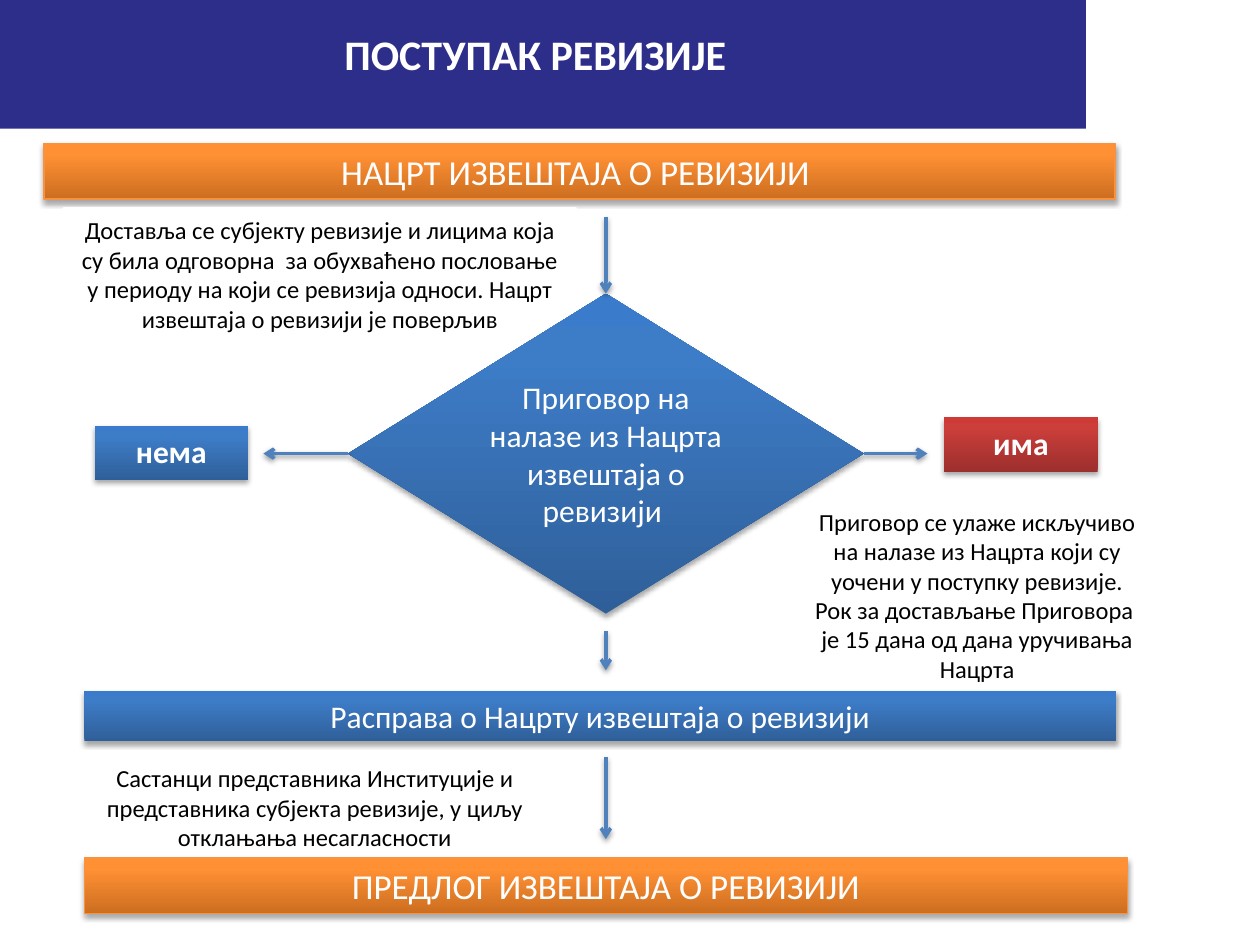
"""Build the audit procedure flowchart slide."""
import copy
import dataclasses

import pptx
import pptx.dml.color
import pptx.enum.shapes
import pptx.enum.text
import pptx.oxml
import pptx.oxml.ns
import pptx.util

Pt = pptx.util.Pt
Color = pptx.dml.color.RGBColor.from_string
Shapes = pptx.enum.shapes.MSO_SHAPE
Anchor = pptx.enum.text.MSO_ANCHOR
AutoSize = pptx.enum.text.MSO_AUTO_SIZE


@dataclasses.dataclass(frozen=True)
class Theme:
    """Hold the colours and type sizes of the slide."""
    font: str = "Calibri"
    header: str = "2D2D8A"
    white: str = "FFFFFF"
    black: str = "000000"
    arrow: str = "4F81BD"
    orange_line: str = "F69240"
    orange: tuple = ("CC6E20", "FF9034", "FF9136")
    blue: tuple = ("2F5F99", "3D7CC7", "3A7CCB")
    red: tuple = ("9C2F2D", "CB3E3A", "CE3B37")
    stops: tuple = (0, 0.8, 1)
    title_size: int = 24
    stage_size: int = 20
    step_size: int = 18
    note_size: int = 14


THEME = Theme()


def apply_format(target, values):
    """Set each named attribute of the target."""
    for name, value in values.items():
        setattr(target, name, value)


def write_text(shape, text, size, color, bold=False, anchor=Anchor.TOP, grow=False):
    """Write one centred paragraph into a shape."""
    frame = shape.text_frame
    apply_format(frame, {
        "word_wrap": True,
        "vertical_anchor": anchor,
        "auto_size": AutoSize.SHAPE_TO_FIT_TEXT if grow else AutoSize.NONE,
    })
    paragraph = frame.paragraphs[0]
    paragraph.alignment = pptx.enum.text.PP_ALIGN.CENTER
    run = paragraph.add_run()
    run.text = text
    apply_format(run.font, {"name": THEME.font, "size": Pt(size), "bold": bold})
    run.font.color.rgb = Color(color)


def add_shadow(element, opacity, distance):
    """Put a soft downward shadow into the effect list of an element."""
    properties = element.spPr
    effects = properties.find(pptx.oxml.ns.qn("a:effectLst"))
    if effects is None:
        effects = pptx.oxml.parse_xml(f"<a:effectLst {pptx.oxml.ns.nsdecls('a')}/>")
        properties.append(effects)
    effects.append(pptx.oxml.parse_xml(
        f'<a:outerShdw {pptx.oxml.ns.nsdecls("a")} blurRad="{Pt(3.1)}" '
        f'dist="{Pt(distance)}" dir="5400000" rotWithShape="0">'
        f'<a:srgbClr val="{THEME.black}"><a:alpha val="{opacity * 1000}"/></a:srgbClr>'
        '</a:outerShdw>'))


def add_panel(slide, box, fill, line=None, width=0.75, kind=Shapes.RECTANGLE):
    """Add a flat shape with a solid fill and an optional outline."""
    shape = slide.shapes.add_shape(kind, *map(Pt, box))
    shape.shadow.inherit = False
    shape.fill.solid()
    shape.fill.fore_color.rgb = Color(fill)
    if line:
        shape.line.color.rgb = Color(line)
        shape.line.width = Pt(width)
    else:
        shape.line.fill.background()
    return shape


def add_block(slide, box, colors, text, size=THEME.step_size, line=None,
              kind=Shapes.RECTANGLE, **text_format):
    """Add a shaded flowchart block with its label."""
    shape = add_panel(slide, box, colors[0], line, kind=kind)
    shape.fill.gradient()
    shape.fill.gradient_angle = 90
    stop_list = shape._element.spPr.find(".//" + pptx.oxml.ns.qn("a:gsLst"))
    stop_list.append(copy.deepcopy(stop_list[0]))
    for stop, position, color in zip(shape.fill.gradient_stops, THEME.stops, colors):
        stop.position = position
        stop.color.rgb = Color(color)
    add_shadow(shape._element, 35, 1.8)
    write_text(shape, text, size, THEME.white, **text_format)


def add_note(slide, box, text, size=THEME.note_size, color=THEME.black, bold=False):
    """Add a text box that grows with its text."""
    shape = slide.shapes.add_textbox(*map(Pt, box))
    write_text(shape, text, size, color, bold, grow=True)


def add_arrow(slide, start, end):
    """Add a shadowed connector with an open arrowhead at its end."""
    connector = slide.shapes.add_connector(
        pptx.enum.shapes.MSO_CONNECTOR.STRAIGHT, *map(Pt, start + end))
    connector.line.color.rgb = Color(THEME.arrow)
    connector.line.width = Pt(2)
    connector.line._get_or_add_ln().append(pptx.oxml.parse_xml(
        f'<a:tailEnd {pptx.oxml.ns.nsdecls("a")} type="arrow"/>'))
    add_shadow(connector._element, 38, 1.6)


def main():
    """Build and save the slide."""
    presentation = pptx.Presentation()
    apply_format(presentation, {"slide_width": Pt(720), "slide_height": Pt(540)})
    slide = presentation.slides.add_slide(presentation.slide_layouts[6])

    add_panel(slide, (-1.5, 0, 622, 73.5), THEME.header)
    add_note(slide, (36.7, 13, 538.5, 36), "ПОСТУПАК РЕВИЗИЈЕ",
             THEME.title_size, THEME.white, True)

    bar = {"anchor": Anchor.MIDDLE, "grow": True}
    stage = {"size": THEME.stage_size, "line": THEME.orange_line, **bar}
    add_block(slide, (25.2, 82, 612, 31.7), THEME.orange,
              "НАЦРТ ИЗВЕШТАЈА О РЕВИЗИЈИ ", **stage)
    add_block(slide, (54, 243.5, 87.8, 31), THEME.blue, "нема", bold=True)
    add_block(slide, (539.5, 238.5, 87.8, 31), THEME.red, "има", bold=True)
    add_block(slide, (48.2, 394.6, 589.7, 29), THEME.blue,
              "Расправа о Нацрту извештаја о ревизији", **bar)
    add_block(slide, (48.2, 490.3, 596.2, 31.7), THEME.orange,
              "ПРЕДЛОГ ИЗВЕШТАЈА О РЕВИЗИЈИ", **stage)

    delivery = add_panel(slide, (36.7, 119.5, 292.3, 75), THEME.white, THEME.white, 2)
    write_text(delivery, "Доставља се субјекту ревизије и лицима која су била одговорна  "
               "за обухваћено пословање у периоду на који се ревизија односи. "
               "Нацрт извештаја о ревизији је поверљив",
               THEME.note_size, THEME.black, grow=True)

    center_x, center_y, decision_width, decision_height = 346.2, 259.2, 294.6, 182.8
    left, right = center_x - decision_width / 2, center_x + decision_width / 2
    top = center_y - decision_height / 2
    add_block(slide, (left, top, decision_width, decision_height), THEME.blue,
              "Приговор на налазе из Нацрта извештаја о ревизији ",
              kind=Shapes.DIAMOND, anchor=Anchor.MIDDLE)

    add_note(slide, (456.5, 286, 203.8, 108.7),
             "Приговор се улаже искључиво на налазе из Нацрта који су уочени у поступку "
             "ревизије. Рок за достављање Приговора  је 15 дана од дана уручивања Нацрта")
    add_note(slide, (54, 432.7, 252, 58.3),
             "Састанци представника Институције и представника субјекта ревизије, "
             "у циљу отклањања несагласности")

    for start_x, end_x in ((right, 530), (left, 150.5)):
        add_arrow(slide, (start_x, center_y), (end_x, center_y))
    for start_y, end_y in ((360.7, 383), (432.7, 479.5), (123.8, top)):
        add_arrow(slide, (center_x, start_y), (center_x, end_y))

    presentation.save("out.pptx")


if __name__ == "__main__":
    main()
